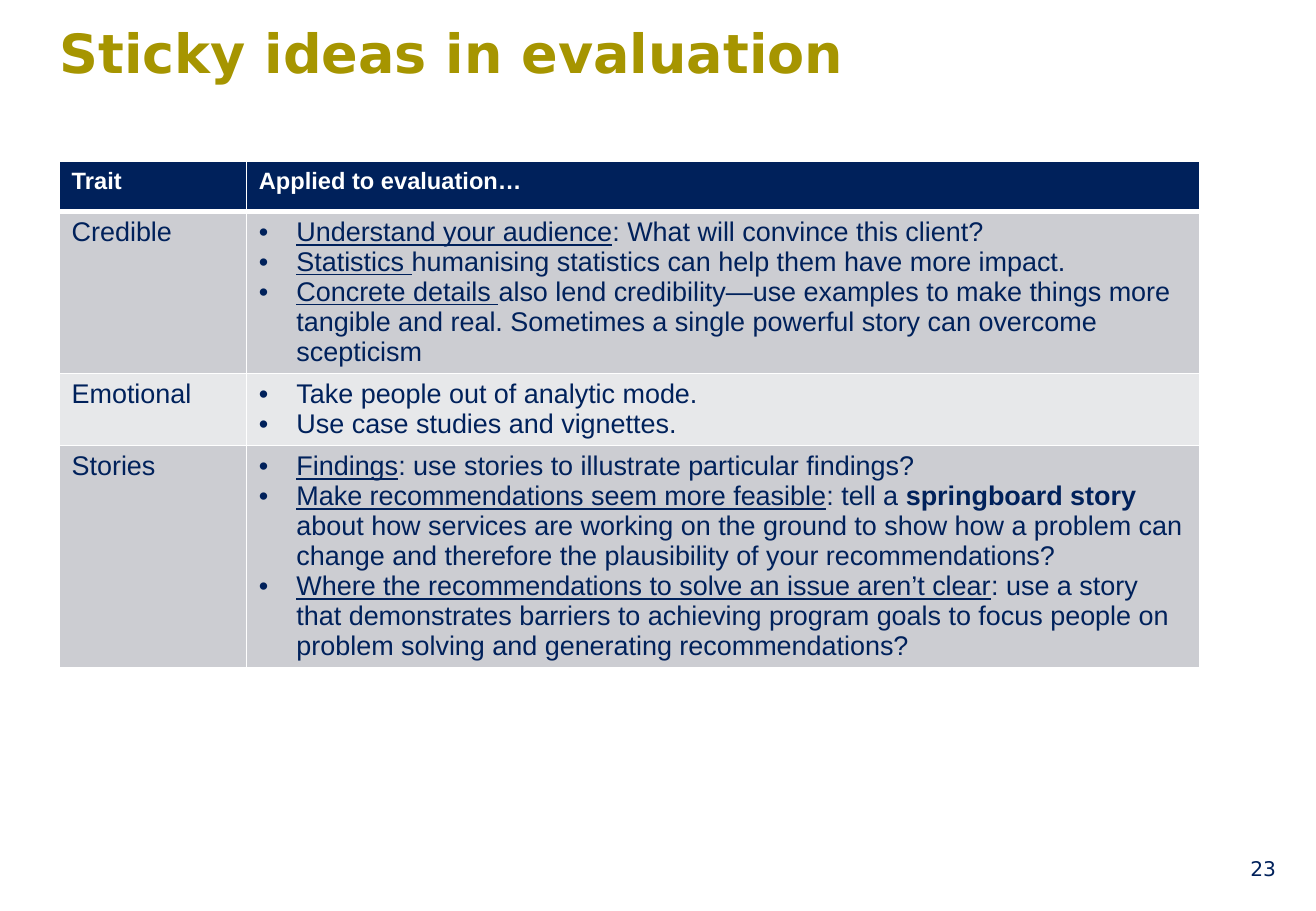
"""Build the slide on sticky ideas in evaluation."""
import lxml.etree
import pptx
import pptx.dml.color
import pptx.enum.text
import pptx.oxml.ns
import pptx.util

EMU_PER_PX = 9144
NAVY, GOLD, WHITE = "00215B", "A69500", "FFFFFF"
BAND_FILLS = ["CCCDD2", "E7E8EA"]
PLAIN, UNDERLINED, BOLD = "plain", "underlined", "bold"

HEADINGS = ["Trait", "Applied to evaluation…"]
TRAITS = [
    ("Credible", [
        [("Understand your audience", UNDERLINED),
         (": What will convince this client?", PLAIN)],
        [("Statistics ", UNDERLINED),
         ("humanising statistics can help them have more impact.", PLAIN)],
        [("Concrete details ", UNDERLINED),
         ("also lend credibility—use examples to make things more tangible and real. "
          "Sometimes a single powerful story can overcome scepticism", PLAIN)],
    ]),
    ("Emotional", [
        [("Take people out of analytic mode.", PLAIN)],
        [("Use case studies and vignettes.", PLAIN)],
    ]),
    ("Stories", [
        [("Findings", UNDERLINED),
         (": use stories to illustrate particular findings?", PLAIN)],
        [("Make recommendations seem more feasible", UNDERLINED),
         (": tell a ", PLAIN),
         ("springboard story ", BOLD),
         ("about how services are working on the ground to show how a problem can "
          "change and therefore the plausibility of your recommendations?", PLAIN)],
        [("Where the recommendations to solve an issue aren’t clear", UNDERLINED),
         (": use a story that demonstrates barriers to achieving program goals to "
          "focus people on problem solving and generating recommendations?", PLAIN)],
    ]),
]


def px(length):
    """Turn whole px into EMU."""
    return pptx.util.Emu(length * EMU_PER_PX)


def color(value):
    """Turn a hex string into a colour."""
    return pptx.dml.color.RGBColor.from_string(value)


def add_element(parent, tag, **attributes):
    """Append a drawing element to a parent."""
    return lxml.etree.SubElement(parent, pptx.oxml.ns.qn(tag), attributes)


def set_font(paragraph, name, size, hex_color, bold=False):
    """Set the font shared by all runs of a paragraph."""
    font = paragraph.font
    font.name, font.size, font.bold = name, pptx.util.Pt(size), bold
    font.color.rgb = color(hex_color)


def set_bullet(paragraph):
    """Give a paragraph a hanging round bullet."""
    properties = paragraph._p.get_or_add_pPr()
    properties.set("marL", str(px(31)))
    properties.set("indent", str(px(-31)))
    add_element(properties, "a:buFont", typeface="Arial")
    add_element(properties, "a:buChar", char="•")


def style_cell(cell, fill, bottom_width=1):
    """Give a cell white borders and a solid fill."""
    properties = cell._tc.get_or_add_tcPr()
    widths = {"a:lnL": 1, "a:lnR": 1, "a:lnT": 1, "a:lnB": bottom_width}
    for tag, width in widths.items():
        line = add_element(properties, tag, w=str(pptx.util.Pt(width)))
        add_element(add_element(line, "a:solidFill"), "a:srgbClr", val=WHITE)
    cell.fill.solid()
    cell.fill.fore_color.rgb = color(fill)


def fill_bullets(cell, bullets):
    """Write bulleted paragraphs made of styled runs into a cell."""
    for index, pieces in enumerate(bullets):
        frame = cell.text_frame
        paragraph = frame.add_paragraph() if index else frame.paragraphs[0]
        set_bullet(paragraph)
        set_font(paragraph, "Arial", 16, NAVY)
        for text, style in pieces:
            run = paragraph.add_run()
            run.text = text
            if style == UNDERLINED:
                run.font.underline = True
            elif style == BOLD:
                run.font.bold = True


def add_title(slide, text):
    """Place and format the slide title."""
    title = slide.shapes.title
    title.left, title.top, title.width, title.height = px(49), px(16), px(938), px(101)
    frame = title.text_frame
    frame.text = text
    frame.word_wrap = True
    frame.auto_size = pptx.enum.text.MSO_AUTO_SIZE.NONE
    frame.vertical_anchor = pptx.enum.text.MSO_ANCHOR.TOP
    frame.margin_left = frame.margin_right = frame.margin_top = frame.margin_bottom = 0
    frame.paragraphs[0].alignment = pptx.enum.text.PP_ALIGN.LEFT
    set_font(frame.paragraphs[0], "DejaVu Sans", 32, GOLD, bold=True)


def add_trait_table(slide):
    """Add the table of traits and their application."""
    row_count = len(TRAITS) + 1
    table = slide.shapes.add_table(
        row_count, 2, px(49), px(133), px(938), px(41 * row_count)).table
    for column, width in zip(table.columns, [154, 784]):
        column.width = px(width)
    for cell, heading in zip(table.rows[0].cells, HEADINGS):
        style_cell(cell, NAVY, bottom_width=3)
        cell.text = heading
        set_font(cell.text_frame.paragraphs[0], "Arial", 14, WHITE, bold=True)
    for index, (trait, bullets) in enumerate(TRAITS):
        trait_cell, bullet_cell = table.rows[index + 1].cells
        for cell in (trait_cell, bullet_cell):
            style_cell(cell, BAND_FILLS[index % 2])
        trait_cell.text = trait
        set_font(trait_cell.text_frame.paragraphs[0], "Arial", 16, NAVY)
        fill_bullets(bullet_cell, bullets)


def add_page_number(slide, number):
    """Add the page number at the lower right."""
    frame = slide.shapes.add_textbox(px(807), px(695), px(253), px(40)).text_frame
    frame.word_wrap = True
    frame.vertical_anchor = pptx.enum.text.MSO_ANCHOR.MIDDLE
    frame.text = number
    frame.paragraphs[0].alignment = pptx.enum.text.PP_ALIGN.RIGHT
    set_font(frame.paragraphs[0], "DejaVu Sans", 12, NAVY)


def main():
    """Build and save the presentation."""
    presentation = pptx.Presentation()
    presentation.slide_width, presentation.slide_height = px(1083), px(750)
    slide = presentation.slides.add_slide(presentation.slide_layouts[5])
    add_title(slide, "Sticky ideas in evaluation")
    add_trait_table(slide)
    add_page_number(slide, "23")
    presentation.save("out.pptx")


if __name__ == "__main__":
    main()
